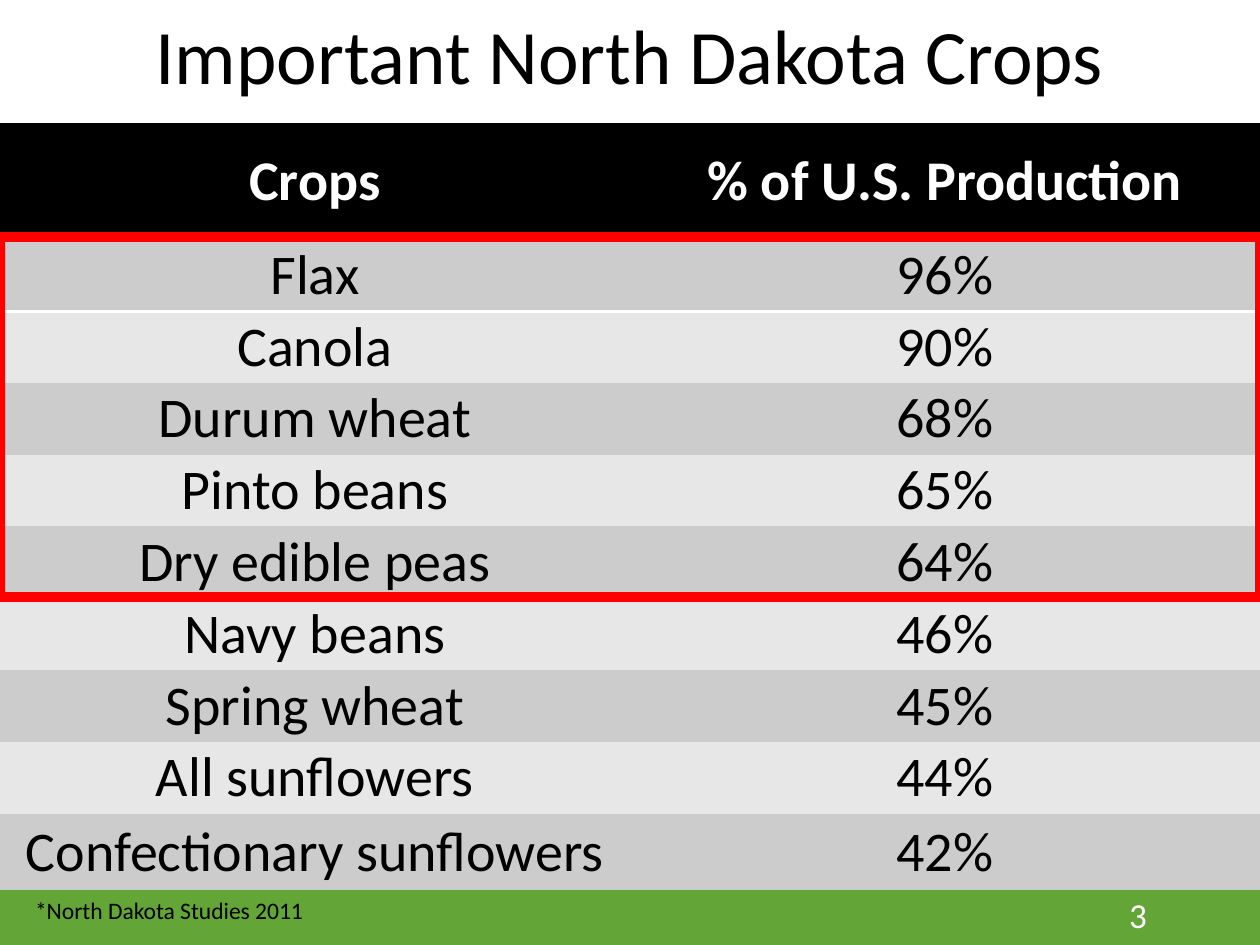
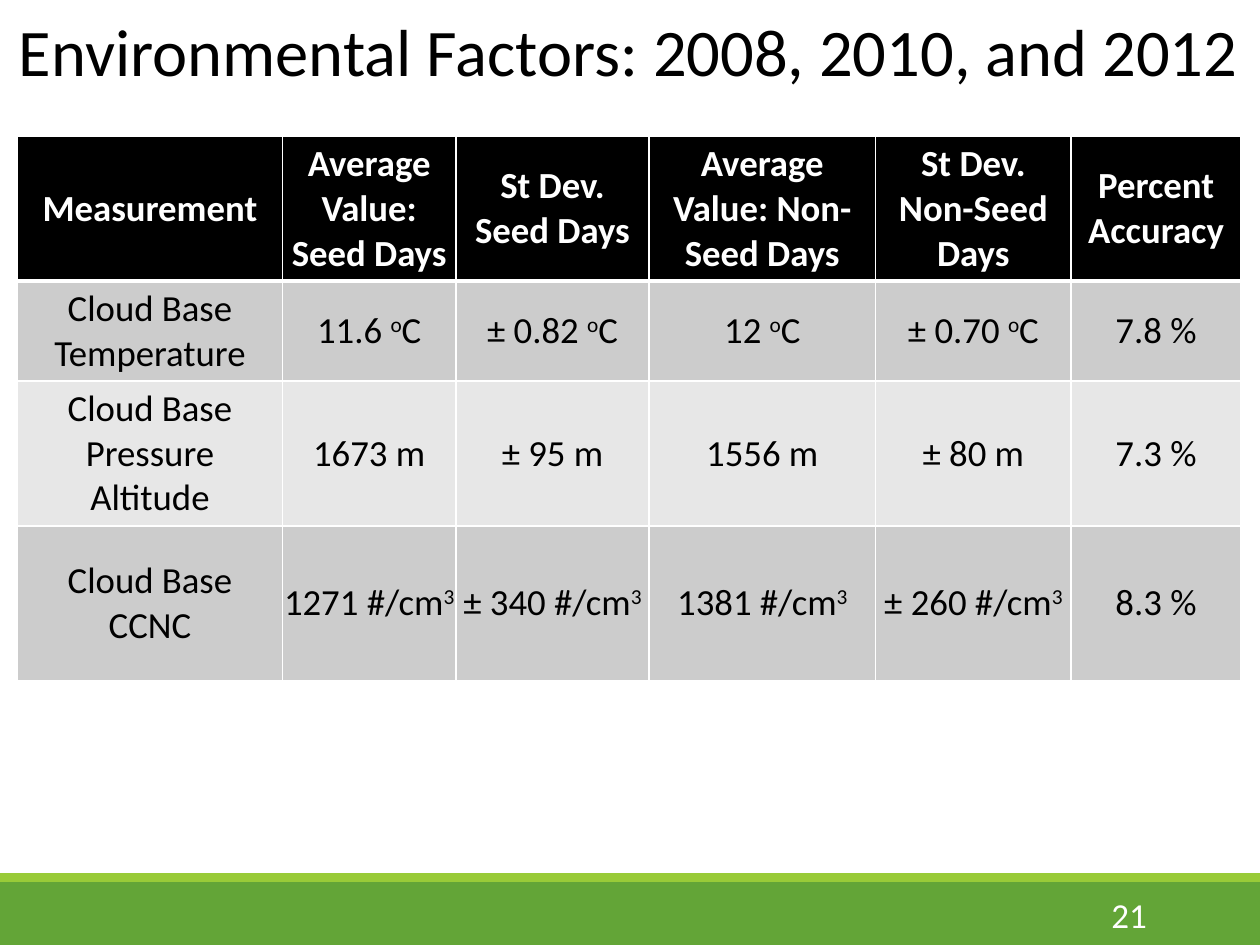
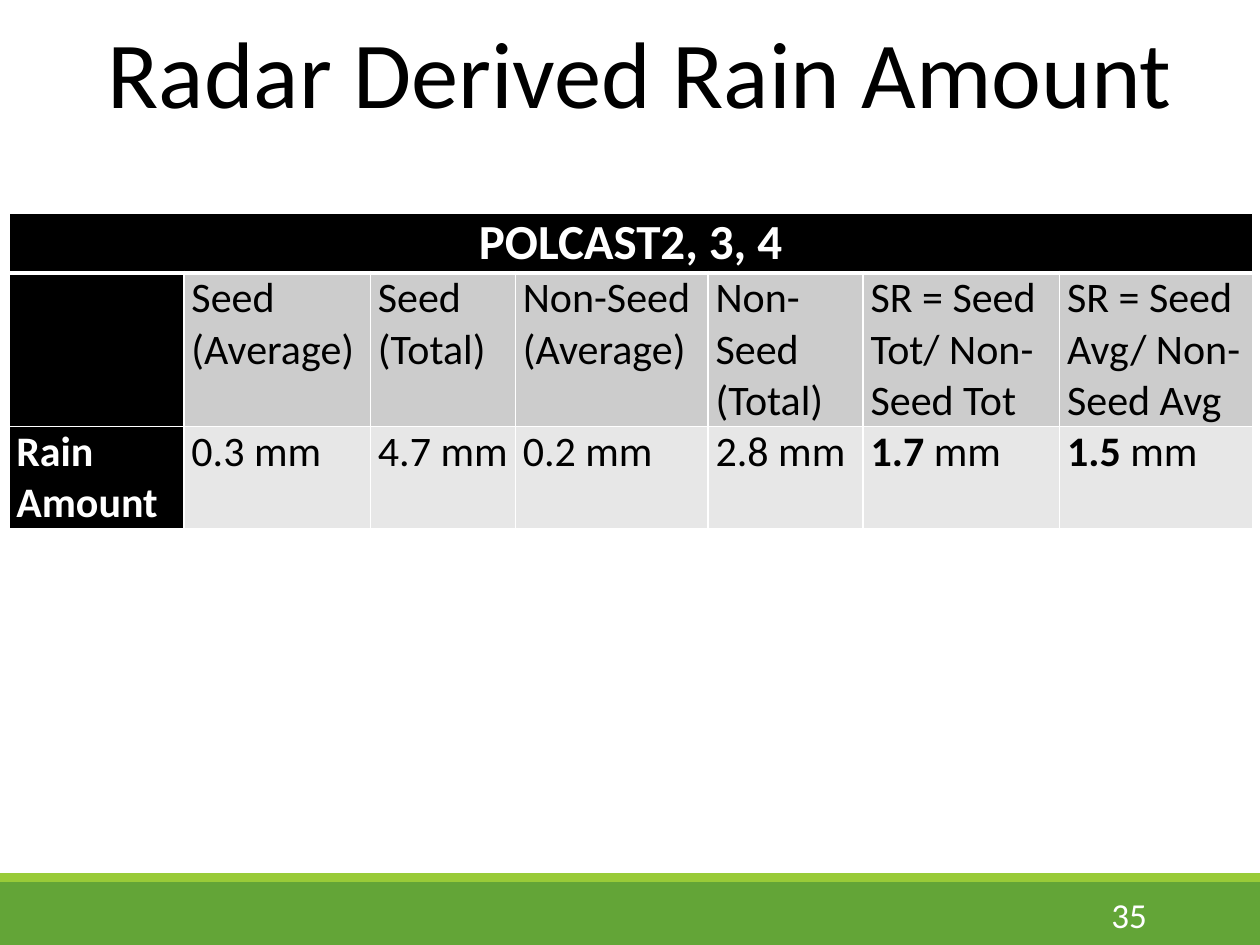
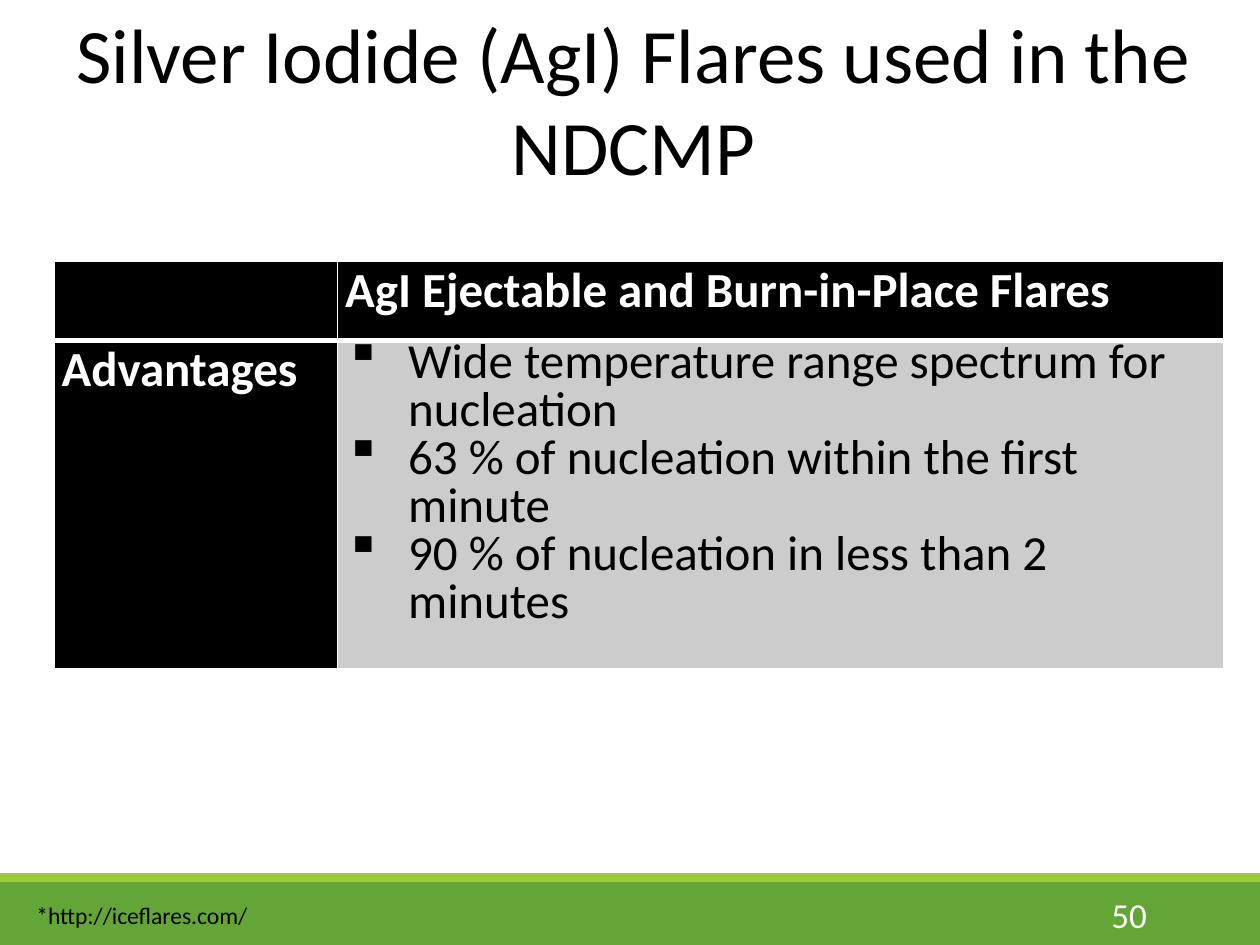
"""Build four slides with tables on North Dakota crops and cloud seeding."""
from dataclasses import dataclass

from lxml.etree import SubElement
from pptx import Presentation
from pptx.dml.color import RGBColor
from pptx.enum.shapes import MSO_SHAPE
from pptx.enum.text import MSO_ANCHOR, MSO_AUTO_SIZE, PP_ALIGN
from pptx.oxml.ns import qn
from pptx.util import Inches, Pt


@dataclass(frozen=True)
class Theme:
    """Colours, font and type sizes shared by all slides."""
    font: str = "Calibri"
    black: str = "000000"
    white: str = "FFFFFF"
    green: str = "63A537"
    lime: str = "99CB38"
    red: str = "FF0000"
    odd_row: str = "CCCCCC"
    even_row: str = "E7E7E7"
    title_size: float = 44
    number_size: float = 20
    note_size: float = 13.5


@dataclass(frozen=True)
class TableStyle:
    """Look of one table; margins are (side, top and bottom) in inches."""
    header_size: float
    body_size: float
    header_align: PP_ALIGN = PP_ALIGN.LEFT
    body_align: PP_ALIGN = PP_ALIGN.LEFT
    anchor: MSO_ANCHOR = MSO_ANCHOR.TOP
    label_margins: tuple = (0.06, 0)
    value_margins: tuple = (0.06, 0)
    dark_labels: bool = False
    grid_width: float = 1
    header_line: float = 3


@dataclass(frozen=True)
class Bullets:
    """A bulleted list inside a table cell."""
    items: tuple


THEME = Theme()
PLAIN_TABLE = "{2D5ABB26-0587-4C30-8999-92F81FD0307C}"
DEGREES_C = [("o", "superscript"), ("C", "")]
PER_CUBIC_CM = [(" #/cm", ""), ("3", "superscript")]


def colour(value):
    """Turn a hex value into a colour."""
    return RGBColor.from_string(value)


def add_run(paragraph, text, size, text_colour, bold=False, superscript=False):
    """Add one formatted run to a paragraph."""
    run = paragraph.add_run()
    run.text = text
    run.font.name = THEME.font
    run.font.size = Pt(size)
    run.font.bold = bold
    run.font.color.rgb = colour(text_colour)
    if superscript:
        run.font._element.set("baseline", "30000")


def set_margins(frame, horizontal, vertical):
    """Set the four margins of a text frame or cell."""
    frame.margin_left = frame.margin_right = Inches(horizontal)
    frame.margin_top = frame.margin_bottom = Inches(vertical)


def add_master_bands(presentation, slide):
    """Put the two green footer bands on the slide master."""
    bands = [(7, 0.5, THEME.green), (6.93, 0.07, THEME.lime)]
    for index, (top, height, fill) in enumerate(bands):
        band = slide.shapes.add_shape(MSO_SHAPE.RECTANGLE, 0, Inches(top), Inches(10), Inches(height))
        band.shadow.inherit = False
        band.fill.solid()
        band.fill.fore_color.rgb = colour(fill)
        band.line.fill.background()
        band.element.nvSpPr.cNvPr.set("id", str(101 + index))
        presentation.slide_master.shapes.element.insert(2 + index, band.element)


def set_title(slide, text, left, top, height, size=THEME.title_size,
              anchor=MSO_ANCHOR.TOP, line_spacing=1.0):
    """Place and format the title placeholder."""
    title = slide.shapes.title
    title.left, title.top = Inches(left), Inches(top)
    title.width, title.height = Inches(10), Inches(height)
    frame = title.text_frame
    frame.auto_size = MSO_AUTO_SIZE.NONE
    frame.word_wrap = True
    frame.vertical_anchor = anchor
    paragraph = frame.paragraphs[0]
    paragraph.alignment = PP_ALIGN.CENTER
    paragraph.line_spacing = line_spacing
    add_run(paragraph, text, size, THEME.black)


def add_slide_number(slide, number):
    """Add the white page number in the footer band."""
    box = slide.shapes.add_textbox(Inches(8.12), Inches(7.06), Inches(1.08), Inches(0.4))
    box.text_frame.word_wrap = True
    box.text_frame.vertical_anchor = MSO_ANCHOR.MIDDLE
    paragraph = box.text_frame.paragraphs[0]
    paragraph.alignment = PP_ALIGN.RIGHT
    add_run(paragraph, str(number), THEME.number_size, THEME.white)


def add_source_note(slide, text, left, top, width):
    """Add a source note in the footer band."""
    box = slide.shapes.add_textbox(Inches(left), Inches(top), Inches(width), Inches(0.33))
    box.text_frame.word_wrap = False
    box.text_frame.auto_size = MSO_AUTO_SIZE.SHAPE_TO_FIT_TEXT
    add_run(box.text_frame.paragraphs[0], text, THEME.note_size, THEME.black)


def add_highlight_frame(slide, top, height):
    """Outline a group of table rows in red."""
    frame = slide.shapes.add_shape(MSO_SHAPE.RECTANGLE, 0, Inches(top), Inches(10), Inches(height))
    frame.shadow.inherit = False
    frame.fill.background()
    frame.line.color.rgb = colour(THEME.red)
    frame.line.width = Pt(6)


def set_borders(cell, widths):
    """Draw white borders; widths maps L, R, T and B to points."""
    properties = cell._tc.get_or_add_tcPr()
    for side, width in widths.items():
        if width:
            line = SubElement(properties, qn(f"a:ln{side}"), w=str(Pt(width)))
            fill = SubElement(line, qn("a:solidFill"))
            SubElement(fill, qn("a:srgbClr"), val=THEME.white)


def write_bullets(cell, bullets, size):
    """Write a square-bulleted list into a cell."""
    frame = cell.text_frame
    for index, item in enumerate(bullets.items):
        paragraph = frame.add_paragraph() if index else frame.paragraphs[0]
        properties = paragraph._p.get_or_add_pPr()
        properties.set("marL", str(Inches(0.5)))
        properties.set("indent", str(Inches(-0.5)))
        SubElement(properties, qn("a:buChar"), char="▪")
        paragraph.line_spacing = 0.8
        add_run(paragraph, item, size, THEME.black)


def write_cell(cell, content, size, text_colour, align, bold):
    """Write a string or a list of (text, style) runs into a cell."""
    paragraph = cell.text_frame.paragraphs[0]
    paragraph.alignment = align
    runs = [(content, "")] if isinstance(content, str) else content
    for text, style in runs:
        for index, line in enumerate(text.split("\n")):
            if index:
                paragraph.add_line_break()
            if line:
                add_run(paragraph, line, size, text_colour,
                        bold or style == "bold", style == "superscript")


def format_cell(cell, row, column, content, style):
    """Apply borders, fill, margins and text for one table position."""
    header = row == 0
    dark = header or (style.dark_labels and column == 0)
    grid = style.grid_width
    set_borders(cell, {"L": grid, "R": grid,
                       "T": style.header_line if row == 1 else grid,
                       "B": style.header_line if header else grid})
    cell.fill.solid()
    body_fill = THEME.odd_row if row % 2 else THEME.even_row
    cell.fill.fore_color.rgb = colour(THEME.black if dark else body_fill)
    cell.vertical_anchor = style.anchor
    set_margins(cell, *(style.label_margins if header or column == 0 else style.value_margins))
    size = style.header_size if header else style.body_size
    if isinstance(content, Bullets):
        write_bullets(cell, content, size)
    else:
        write_cell(cell, content, size, THEME.white if dark else THEME.black,
                   style.header_align if header else style.body_align, dark)


def add_data_table(slide, left, top, widths, heights, rows, style):
    """Add a table; a row with a single entry spans all columns."""
    frame = slide.shapes.add_table(len(heights), len(widths), Inches(left), Inches(top),
                                   Inches(sum(widths)), Inches(sum(heights)))
    table = frame.table
    table._tbl.tblPr.find(qn("a:tableStyleId")).text = PLAIN_TABLE
    for column, width in zip(table.columns, widths):
        column.width = Inches(width)
    for row, (height, contents) in enumerate(zip(heights, rows)):
        table.rows[row].height = Inches(height)
        padded = contents + [""] * (len(widths) - len(contents))
        for column, content in enumerate(padded):
            format_cell(table.cell(row, column), row, column, content, style)
        if len(contents) == 1:
            table.cell(row, 0).merge(table.cell(row, len(widths) - 1))


def build_crops(slide):
    """Build the crop production slide."""
    set_title(slide, "Important North Dakota Crops", 0, 0, 0.95,
              anchor=MSO_ANCHOR.MIDDLE, line_spacing=0.9)
    rows = [["Crops", "% of U.S. Production"], ["Flax", "96%"], ["Canola", "90%"],
            ["Durum wheat", "68%"], ["Pinto beans", "65%"], ["Dry edible peas", "64%"],
            ["Navy beans", "46%"], ["Spring wheat", "45%"], ["All sunflowers", "44%"],
            ["Confectionary sunflowers", "42%"]]
    style = TableStyle(32, 32, PP_ALIGN.CENTER, PP_ALIGN.CENTER, MSO_ANCHOR.MIDDLE,
                       (0.02, 0.01), (0.02, 0.01), grid_width=0, header_line=2)
    add_data_table(slide, 0, 0.98, [5, 5], [0.92] + [0.57] * 8 + [0.61], rows, style)
    add_highlight_frame(slide, 1.88, 2.86)
    add_source_note(slide, "*North Dakota Studies 2011", 0.18, 7.06, 2.36)


def build_environment(slide):
    """Build the environmental factors slide."""
    set_title(slide, "Environmental Factors: 2008, 2010, and 2012", -0.01, 0.1, 0.86,
              size=38, line_spacing=0.9)
    temperatures = [[(f"{value} ", "")] + DEGREES_C
                    for value in ("11.6", "± 0.82", "12", "± 0.70")]
    counts = [[(value, "")] + PER_CUBIC_CM
              for value in ("1271", "± 340", "1381", "± 260")]
    rows = [["Measurement", "Average Value:\nSeed Days", "St Dev. Seed Days",
             "Average Value: Non-Seed Days", "St Dev. Non-Seed Days", "Percent Accuracy"],
            ["Cloud Base Temperature", *temperatures, "7.8 %"],
            ["Cloud Base Pressure Altitude", "1673 m", "± 95 m", "1556 m", "± 80 m", "7.3 %"],
            ["Cloud Base CCNC", *counts, "8.3 %"]]
    style = TableStyle(21, 21, PP_ALIGN.CENTER, PP_ALIGN.CENTER, MSO_ANCHOR.MIDDLE,
                       (0.07, 0.04), (0.01, 0))
    add_data_table(slide, 0.14, 1.08, [2.1, 1.38, 1.53, 1.8, 1.55, 1.35],
                   [1.1, 0.76, 1.1, 1.23], rows, style)


def build_rain(slide):
    """Build the radar rain amount slide."""
    set_title(slide, "Radar Derived Rain Amount", 0.08, 0.06, 1.01, size=54)
    ratios = [[(value, "bold"), (" mm", "")] for value in ("1.7", "1.5")]
    rows = [["POLCAST2, 3, 4"],
            ["", "Seed (Average)", "Seed (Total)", "Non-Seed (Average)", "Non-Seed (Total)",
             "SR = Seed Tot/ Non-Seed Tot", "SR = Seed Avg/ Non-Seed Avg"],
            ["Rain Amount", "0.3 mm", "4.7 mm", "0.2 mm", "2.8 mm", *ratios]]
    style = TableStyle(28, 24, header_align=PP_ALIGN.CENTER, dark_labels=True)
    add_data_table(slide, 0.07, 1.69, [1.39, 1.48, 1.15, 1.53, 1.23, 1.56, 1.53],
                   [0.47, 1.19, 0.81], rows, style)


def build_flares(slide):
    """Build the silver iodide flares slide."""
    set_title(slide, "Silver Iodide (AgI) Flares used in the NDCMP", 0.03, 0, 1.58)
    advantages = Bullets(("Wide temperature range spectrum for nucleation",
                          "63 % of nucleation within the first minute",
                          "90 % of nucleation in less than 2 minutes"))
    rows = [["", "AgI Ejectable and Burn-in-Place Flares"], ["Advantages", advantages]]
    add_data_table(slide, 0.43, 2.07, [2.25, 7.03], [0.63, 2.61], rows,
                   TableStyle(28, 28, dark_labels=True))
    add_source_note(slide, "*http://iceflares.com/", 0.19, 7.1, 1.91)


def main():
    """Create and save the presentation."""
    presentation = Presentation()
    presentation.slide_width, presentation.slide_height = Inches(10), Inches(7.5)
    title_only = presentation.slide_layouts[5]
    builders = [(build_crops, 3), (build_environment, 21), (build_rain, 35), (build_flares, 50)]
    for index, (build, number) in enumerate(builders):
        slide = presentation.slides.add_slide(title_only)
        if index == 0:
            add_master_bands(presentation, slide)
        build(slide)
        add_slide_number(slide, number)
    presentation.save("out.pptx")


if __name__ == "__main__":
    main()
